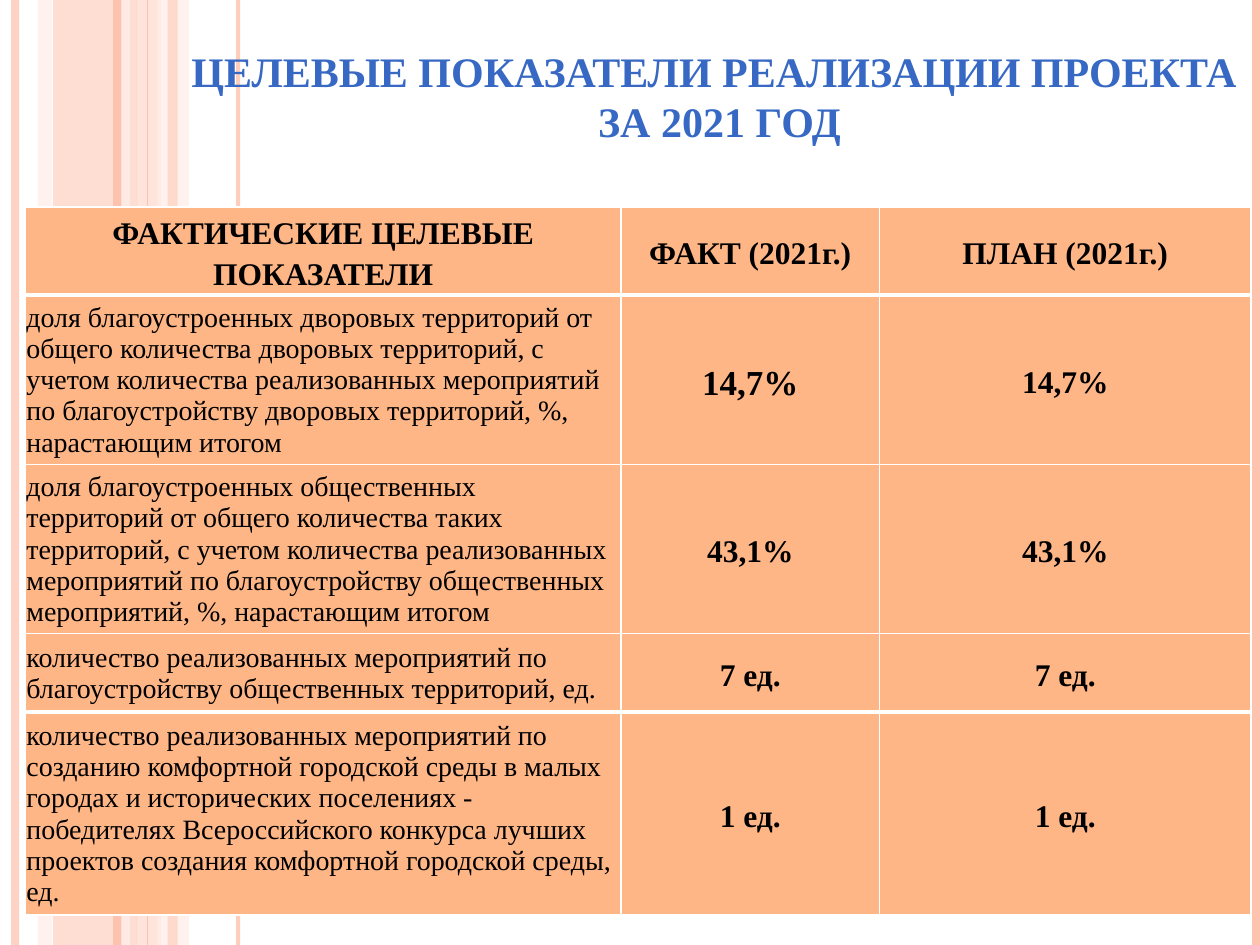
"""Build a slide comparing actual and planned project targets for 2021."""
from dataclasses import dataclass

from lxml import etree
from pptx import Presentation
from pptx import util as u
from pptx.dml.color import RGBColor
from pptx.enum import shapes, text
from pptx.oxml.ns import qn

WIDTH, HEIGHT = u.Inches(10), u.Inches(7.5)
FONT = "Times New Roman"
BLACK = RGBColor(0, 0, 0)
WHITE = RGBColor(255, 255, 255)
BLUE = RGBColor(0x36, 0x68, 0xC4)
ORANGE = RGBColor(0xFE, 0xB6, 0x87)
PEACH = RGBColor(0xFE, 0xC3, 0xAE)
PINK = RGBColor(0xFF, 0xD9, 0xCE)
PALE = RGBColor(0xFF, 0xED, 0xE8)
CENTER, LEFT = text.PP_ALIGN.CENTER, text.PP_ALIGN.LEFT


@dataclass
class Band:
    """A full-height filled stripe; x and width are percent of slide width."""
    x: float
    width: float
    color: RGBColor
    opacity: int


@dataclass
class Rule:
    """A full-height line; x is percent of slide width, weight in points."""
    x: float
    weight: float
    color: RGBColor
    opacity: int = 100


@dataclass
class Row:
    """One table row: height in percent of slide height and its cells."""
    height: float
    label: str
    fact: str
    plan: str
    fact_size: int = 18


BACKDROP = [
    Band(4.2, 6.7, PEACH, 54), Band(3, 1.1, PINK, 36),
    Band(10.8, 2, PINK, 70), Band(12.5, 2.5, PALE, 71),
    Rule(1.2, 4.5, PEACH, 73), Rule(10, 4.5, PALE, 83),
    Rule(9.3, 4.5, PEACH), Rule(18.9, 2.25, PEACH, 82),
    Rule(11.7, 0.75, PEACH), Rule(99.7, 4.5, PEACH),
    Band(13.3, 0.8, PEACH, 51),
]
COLUMNS = [47.3, 20.5, 29.5]
ROWS = [
    Row(9.3, "ФАКТИЧЕСКИЕ ЦЕЛЕВЫЕ ПОКАЗАТЕЛИ", "ФАКТ (2021г.)", "ПЛАН (2021г.)"),
    Row(17.9, "доля благоустроенных дворовых территорий от общего количества "
        "дворовых территорий, с учетом количества реализованных мероприятий по "
        "благоустройству дворовых территорий, %, нарастающим итогом",
        "14,7%", "14,7%", 20),
    Row(17.9, "доля благоустроенных общественных территорий от общего количества "
        "таких территорий, с учетом количества реализованных мероприятий по "
        "благоустройству общественных мероприятий, %, нарастающим итогом",
        "43,1%", "43,1%"),
    Row(8.3, "количество реализованных мероприятий по благоустройству "
        "общественных территорий, ед.", "7 ед.", "7 ед."),
    Row(21.3, "количество реализованных мероприятий по созданию комфортной "
        "городской среды в малых городах и исторических поселениях - победителях "
        "Всероссийского конкурса лучших проектов создания комфортной городской "
        "среды, ед.", "1 ед.", "1 ед."),
]
HEAVY_EDGES = {1, 4}


def across(percent: float) -> int:
    """Convert percent of slide width to a length."""
    return round(WIDTH * percent / 100)


def down(percent: float) -> int:
    """Convert percent of slide height to a length."""
    return round(HEIGHT * percent / 100)


def set_opacity(sp, percent: int) -> None:
    """Apply an opacity to every explicit colour of a shape."""
    if percent < 100:
        for color in sp._element.spPr.iter(qn("a:srgbClr")):
            etree.SubElement(color, qn("a:alpha"), val=str(percent * 1000))


def draw_band(s, band: Band) -> None:
    """Draw a translucent stripe."""
    sp = s.shapes.add_shape(shapes.MSO_SHAPE.RECTANGLE, across(band.x), 0,
                            across(band.width), HEIGHT)
    sp.shadow.inherit = False
    sp.fill.solid()
    sp.fill.fore_color.rgb = band.color
    sp.line.fill.background()
    set_opacity(sp, band.opacity)


def draw_rule(s, rule: Rule) -> None:
    """Draw a vertical line."""
    x = across(rule.x)
    sp = s.shapes.add_connector(shapes.MSO_CONNECTOR.STRAIGHT, x, 0, x, HEIGHT)
    sp.line.color.rgb = rule.color
    sp.line.width = u.Pt(rule.weight)
    etree.SubElement(sp._element.spPr, qn("a:effectLst"))
    set_opacity(sp, rule.opacity)


def write(tf, content: str, *, size: int, color: RGBColor = BLACK,
          bold: bool = True, align=CENTER, spacing: float = 1, after: float = 0) -> None:
    """Write one formatted paragraph."""
    tf.text = content
    tf.word_wrap = True
    p = tf.paragraphs[0]
    p.alignment, p.line_spacing = align, spacing
    p.space_before, p.space_after = u.Pt(0), u.Pt(after)
    for r in p.runs:
        r.font.name, r.font.size, r.font.bold = FONT, u.Pt(size), bold
        r.font.color.rgb = color


def style_cell(cell, row: int) -> None:
    """Set the borders, fill, margins and anchor of a cell."""
    tc_pr = cell._tc.get_or_add_tcPr()
    edges = {"L": 1, "R": 1, "T": 3 if row in HEAVY_EDGES else 1,
             "B": 3 if row + 1 in HEAVY_EDGES else 1}
    for side, weight in edges.items():
        ln = etree.SubElement(tc_pr, qn(f"a:ln{side}"), w=str(u.Pt(weight)))
        fill = etree.SubElement(ln, qn("a:solidFill"))
        etree.SubElement(fill, qn("a:srgbClr"), val=str(WHITE))
    cell.fill.solid()
    cell.fill.fore_color.rgb = ORANGE
    cell.margin_left = cell.margin_right = cell.margin_top = u.Inches(0.01)
    cell.margin_bottom = 0
    cell.vertical_anchor = text.MSO_ANCHOR.MIDDLE


def draw_table(s, rows: list[Row]) -> None:
    """Draw the table of targets."""
    table = s.shapes.add_table(
        len(rows), len(COLUMNS), across(2), down(21.9), across(sum(COLUMNS)),
        down(sum(row.height for row in rows))).table
    table.horz_banding = False
    for column, width in zip(table.columns, COLUMNS):
        column.width = across(width)
    for i, row in enumerate(rows):
        table.rows[i].height = down(row.height)
        for j, content in enumerate((row.label, row.fact, row.plan)):
            cell = table.cell(i, j)
            style_cell(cell, i)
            if i and j == 0:
                write(cell.text_frame, content, size=16, bold=False, align=LEFT)
            else:
                write(cell.text_frame, content, spacing=1.15, after=10,
                      size=row.fact_size if j == 1 else 18)


def draw_title(s) -> None:
    """Place and format the title."""
    sp = s.shapes.title
    sp.left, sp.top, sp.width, sp.height = across(13.8), down(4.1), across(86.6), down(12.1)
    tf = sp.text_frame
    write(tf, "ЦЕЛЕВЫЕ ПОКАЗАТЕЛИ РЕАЛИЗАЦИИ ПРОЕКТА \vЗА 2021 ГОД", size=24, color=BLUE)
    tf.vertical_anchor = text.MSO_ANCHOR.TOP
    tf.auto_size = text.MSO_AUTO_SIZE.SHAPE_TO_FIT_TEXT


def main() -> None:
    """Build and save the slide."""
    prs = Presentation()
    prs.slide_width, prs.slide_height = WIDTH, HEIGHT
    s = prs.slides.add_slide(prs.slide_layouts[5])
    for item in BACKDROP:
        if isinstance(item, Band):
            draw_band(s, item)
        else:
            draw_rule(s, item)
    title = s.shapes.title._element
    s.shapes._spTree.append(title)
    draw_title(s)
    draw_table(s, ROWS)
    prs.save("out.pptx")


if __name__ == "__main__":
    main()
